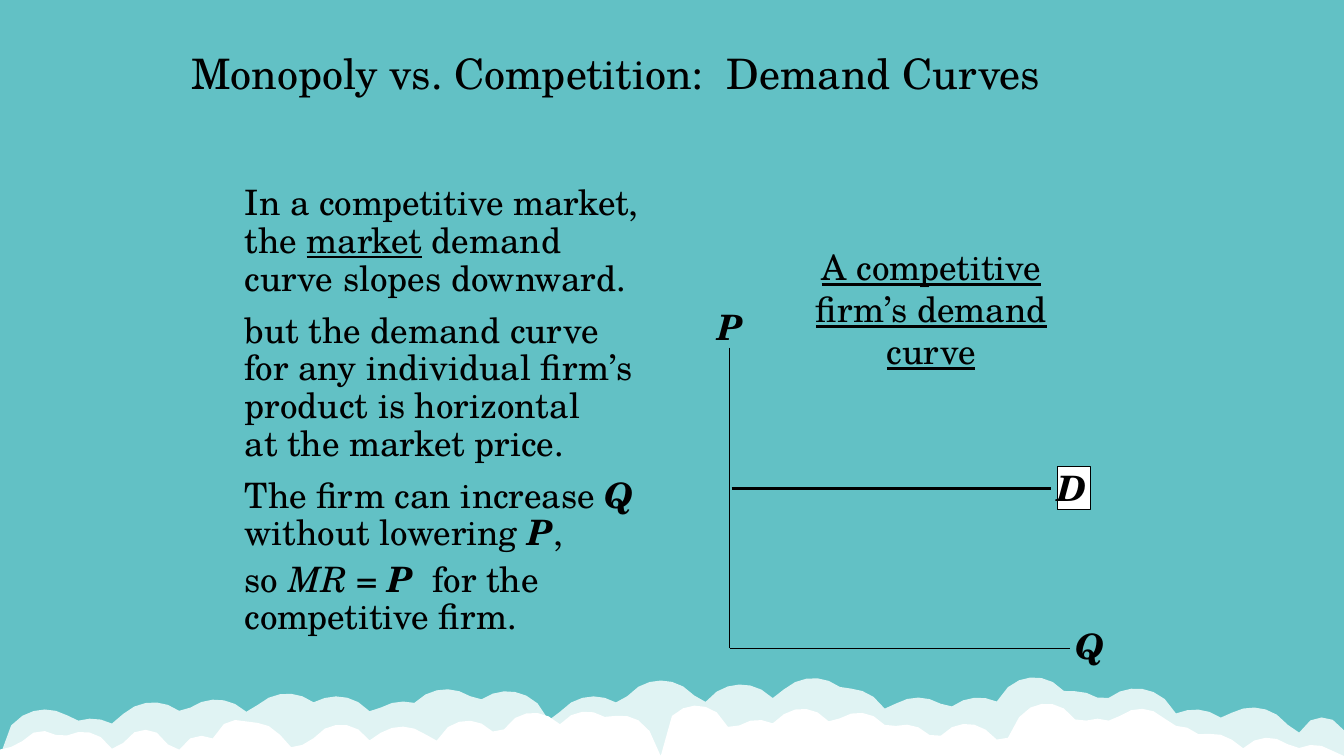
"""Build the slide on demand curves in monopoly and competition."""
from math import sqrt

from lxml.etree import SubElement
from pptx import Presentation
from pptx.dml.color import RGBColor
from pptx.enum.shapes import MSO_CONNECTOR as Connector, MSO_SHAPE as Shape
from pptx.enum.text import MSO_ANCHOR as Anchor, PP_ALIGN as Align
from pptx.oxml.ns import qn
from pptx.util import Cm, Pt

TEAL = RGBColor(0x62, 0xC1, 0xC5)
PALE = RGBColor(0xE0, 0xF3, 0xF3)
WHITE = RGBColor(0xFF, 0xFF, 0xFF)
BLACK = RGBColor(0x00, 0x00, 0x00)
FONT = "TeX Gyre Schola"
WIDTH, HEIGHT = 33.87, 19.05
PLAIN = {}
UNDERLINED = {"underline": True}
ITALIC = {"italic": True}
SYMBOL = {"bold": True, "italic": True}

deck = Presentation()
deck.slide_width, deck.slide_height = Cm(WIDTH), Cm(HEIGHT)
page = deck.slides.add_slide(deck.slide_layouts[6])
page.background.fill.solid()
page.background.fill.fore_color.rgb = TEAL


def write(box, paragraphs, size=25, align=Align.LEFT, spacing=1.0, inset=None):
    """Fill a box with paragraphs given as (space before, runs)."""
    frame = box.text_frame
    frame.word_wrap = True
    frame.vertical_anchor = Anchor.TOP
    if inset is not None:
        for side in ("left", "top", "right", "bottom"):
            setattr(frame, f"margin_{side}", Cm(inset))
    for index, (before, runs) in enumerate(paragraphs):
        para = frame.paragraphs[0] if index == 0 else frame.add_paragraph()
        layout = {"alignment": align, "line_spacing": spacing, "space_before": Pt(before)}
        for name, value in layout.items():
            setattr(para, name, value)
        for text, style in runs:
            for number, line in enumerate(text.split("\n")):
                if number:
                    para.add_line_break()
                span = para.add_run()
                span.text = line
                span.font.color.rgb = BLACK
                for name, value in {"name": FONT, "size": Pt(size), **style}.items():
                    setattr(span.font, name, value)


back_puffs = [
    (1.14, 17.88, 1.12), (2.31, 18.11, 1.12), (3.86, 17.7, 1.12), (5.44, 17.63, 1.12),
    (7.24, 17.48, 1.12), (8.48, 17.55, 1.12), (10.16, 17.68, 1.12), (11.25, 17.37, 1.12),
    (12.78, 17.42, 1.12), (14.96, 17.55, 1.12), (16.66, 17.15, 1.12), (18.67, 17.25, 1.12),
    (20.5, 17.09, 1.12), (21.36, 17.35, 1.12), (23.14, 17.58, 1.12), (24.66, 17.58, 1.12),
    (26.06, 17.07, 1.0), (27.08, 17.42, 1.12), (28.63, 17.35, 1.12), (30.12, 17.88, 1.12),
    (31.57, 17.83, 1.12), (33.32, 18.08, 0.63),
]
front_puffs = [
    (0.25, 18.82, 0.5), (1.07, 18.42, 0.63), (2.08, 18.44, 0.86), (3.66, 18.39, 0.63),
    (5.08, 18.54, 0.63), (5.99, 18.14, 0.63), (6.4, 18.21, 0.86), (7.65, 18.77, 0.86),
    (8.59, 18.26, 0.86), (10.13, 18.31, 1.0), (11.79, 18.16, 0.86), (13.44, 17.96, 0.86),
    (14.78, 17.93, 0.86), (15.65, 18.03, 0.86), (17.55, 17.78, 0.86), (19.1, 18.14, 0.86),
    (20.22, 17.86, 0.86), (21.64, 17.96, 0.86), (22.81, 18.26, 0.86), (24.36, 18.24, 0.86),
    (25.4, 18.59, 0.86), (26.37, 17.73, 0.86), (27.66, 18.11, 0.86), (28.75, 17.86, 0.86),
    (29.64, 18.29, 0.86), (30.56, 18.49, 0.86), (31.95, 18.59, 0.86), (33.1, 18.77, 0.86),
]
STEPS = 120
for puffs, color in ((back_puffs, PALE), (front_puffs, WHITE)):
    outline = []
    for step in range(STEPS + 1):
        x = WIDTH * step / STEPS
        tops = [top + radius - sqrt(radius ** 2 - (x - center) ** 2)
                for center, top, radius in puffs if abs(x - center) <= radius]
        outline.append((Cm(x), Cm(min(tops + [HEIGHT]))))
    builder = page.shapes.build_freeform(Cm(0), Cm(HEIGHT))
    builder.add_line_segments(outline + [(Cm(WIDTH), Cm(HEIGHT))], close=True)
    cloud = builder.convert_to_shape()
    cloud.shadow.inherit = False
    cloud.fill.solid()
    cloud.fill.fore_color.rgb = color
    cloud.line.fill.background()

title = page.shapes.add_textbox(Cm(4.57), Cm(1.22), Cm(25.4), Cm(1.8))
write(title, [(0, [("Monopoly vs. Competition:  Demand Curves", PLAIN)])], 30, spacing=0.9)

body = page.shapes.add_textbox(Cm(5.92), Cm(4.55), Cm(10.9), Cm(14.4))
write(body, [
    (0, [("In a competitive market, the ", PLAIN), ("market", UNDERLINED),
         (" demand curve slopes downward.", PLAIN)]),
    (10, [("but the demand curve \nfor any individual firm’s product is horizontal \n"
           "at the market price.", PLAIN)]),
    (10, [("The firm can increase ", PLAIN), ("Q", SYMBOL), (" without lowering ", PLAIN),
          ("P", SYMBOL), (",", PLAIN)]),
    (6, [("so ", PLAIN), ("MR", ITALIC), (" = ", PLAIN), ("P", SYMBOL),
         ("  for the competitive firm.", PLAIN)]),
], spacing=0.9)

graph_lines = [
    (18.44, 12.32, 26.49, 12.32, 2.25),
    (18.39, 8.76, 18.39, 16.33, 0.75),
    (18.39, 16.33, 26.97, 16.33, 0.75),
]
for x1, y1, x2, y2, weight in graph_lines:
    line = page.shapes.add_connector(Connector.STRAIGHT, Cm(x1), Cm(y1), Cm(x2), Cm(y2))
    line.line.color.rgb = BLACK
    line.line.width = Pt(weight)
    SubElement(line._element.spPr, qn("a:effectLst"))

demand = page.shapes.add_shape(Shape.RECTANGLE, Cm(26.64), Cm(11.76), Cm(0.84), Cm(1.07))
demand.shadow.inherit = False
demand.fill.solid()
demand.fill.fore_color.rgb = WHITE
demand.line.color.rgb = BLACK
demand.line.width = Pt(0.75)
write(demand, [(0, [("D", SYMBOL)])], inset=0)

graph_labels = [
    ("P", 17.75, 7.57, 1.32, 1.32, Align.CENTER, SYMBOL),
    ("Q", 26.85, 15.62, 1.5, 1.32, Align.LEFT, SYMBOL),
    ("A competitive firm’s demand curve", 19.38, 6.07, 8.18, 3.45, Align.CENTER, UNDERLINED),
]
for text, left, top, width, height, align, style in graph_labels:
    label = page.shapes.add_textbox(Cm(left), Cm(top), Cm(width), Cm(height))
    write(label, [(0, [(text, style)])], align=align)

deck.save("out.pptx")
